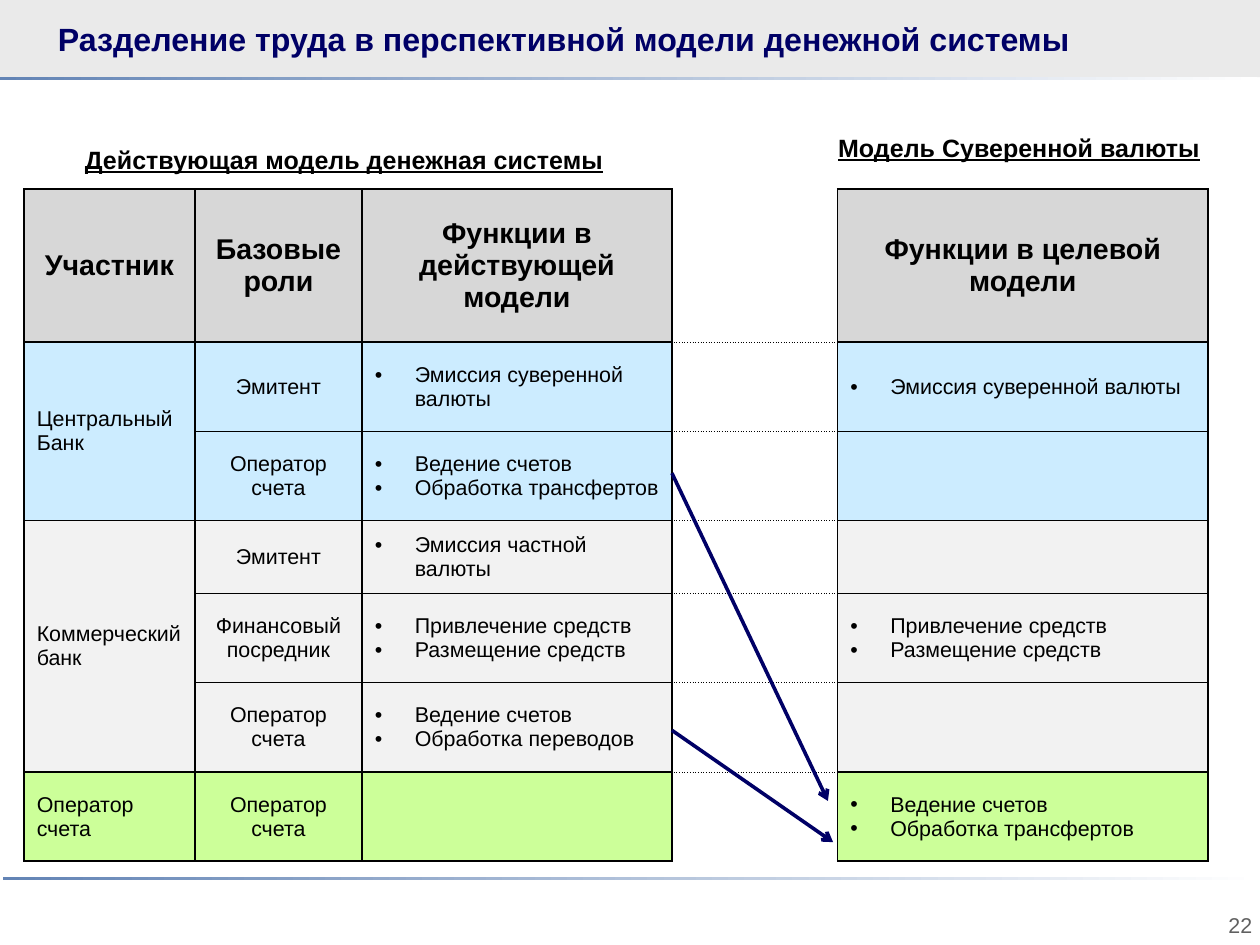
from lxml import etree
from pptx import Presentation
from pptx import util as u
from pptx.dml.color import RGBColor
from pptx.enum import shapes, text
from pptx.oxml import ns

WIDE, HIGH = u.Inches(9.8), u.Inches(7.35)
HEX = {"band": "EAEAEA", "navy": "000066", "black": "000000", "gray": "606060",
       "rule": "6384B5", "white": "FFFFFF", "head": "D7D7D7",
       "blue": "CCECFF", "pale": "F2F2F2", "green": "CCFF99"}
LEFT, TOP = 1.9, 20
COLS = [13.57, 13.27, 24.59, 13.16, 29.39]
ROWS = [16.19, 9.45, 9.45, 7.7, 9.45, 9.45, 9.45]
TINTS = ["head", "blue", "blue", "pale", "pale", "pale", "green"]
GAP = 3
SPANS = [(1, 2), (3, 5)]
CELLS = [
    ["Участник", "Базовые роли", "Функции в действующей модели", "",
     "Функции в целевой модели"],
    ["Центральный Банк", "Эмитент", "Эмиссия суверенной валюты", "",
     "Эмиссия суверенной валюты"],
    ["", "Оператор счета", "Ведение счетов\nОбработка трансфертов", "", ""],
    ["Коммерческий банк", "Эмитент", "Эмиссия частной валюты", "", ""],
    ["", "Финансовый посредник", "Привлечение средств\nРазмещение средств", "",
     "Привлечение средств\nРазмещение средств"],
    ["", "Оператор счета", "Ведение счетов\nОбработка переводов", "", ""],
    ["Оператор счета", "Оператор\nсчета", "", "",
     "Ведение счетов\nОбработка трансфертов"],
]


def rgb(name):
    """Return a palette colour."""
    return RGBColor.from_string(HEX[name])


def across(share):
    """Turn a percentage of the slide width into a length."""
    return round(WIDE * share / 100)


def down(share):
    """Turn a percentage of the slide height into a length."""
    return round(HIGH * share / 100)


def box(x, y, w, h):
    """Return left, top, width and height from slide shares."""
    return across(x), down(y), across(w), down(h)


def node(parent, tag, **attrs):
    """Add a drawing element under a parent."""
    return etree.SubElement(parent, ns.qn("a:" + tag), attrs)


def write(frame, words, size, color="black", bold=False, line=False,
          align=text.PP_ALIGN.LEFT, dots=False):
    """Fill a text frame, one paragraph per line of words."""
    for i, part in enumerate(words.split("\n")):
        para = frame.add_paragraph() if i else frame.paragraphs[0]
        para.alignment = align
        if dots:
            props = para._p.get_or_add_pPr()
            props.set("marL", str(u.Inches(0.31)))
            props.set("indent", str(-u.Inches(0.31)))
            node(props, "buFont", typeface="Arial")
            node(props, "buChar", char="•")
        run = para.add_run()
        run.text = part
        font = run.font
        font.name, font.size = "Arial", u.Pt(size)
        font.bold, font.underline = bold, line
        font.color.rgb = rgb(color)


def band(slide):
    """Add the header band."""
    shape = slide.shapes.add_shape(
        shapes.MSO_SHAPE.RECTANGLE, *box(0, 0, 100, 8.16))
    shape.shadow.inherit = False
    shape.line.fill.background()
    shape.fill.solid()
    shape.fill.fore_color.rgb = rgb("band")


def rule(slide, x, y):
    """Add a fading rule as a one-cell table."""
    table = slide.shapes.add_table(1, 1, *box(x, y, 99.8, 0.3)).table
    table.first_row = table.horz_banding = False
    cell = table.cell(0, 0)
    cell.margin_left = cell.margin_right = 0
    cell.margin_top = cell.margin_bottom = 0
    node(cell.text_frame.paragraphs[0]._p, "endParaRPr", sz="100")
    for side in "LRTB":
        edge(cell, side, 0)
    cell.fill.gradient()
    cell.fill.gradient_angle = 0
    for stop, name in zip(cell.fill.gradient_stops, ("rule", "white")):
        stop.color.rgb = rgb(name)


def title(slide, words):
    """Place the title above the header band."""
    shape = slide.shapes.title
    slide.shapes._spTree.append(shape._element)
    shape.left, shape.top, shape.width, shape.height = box(2.55, 0, 85.71, 8.16)
    frame = shape.text_frame
    frame.auto_size = text.MSO_AUTO_SIZE.NONE
    frame.vertical_anchor = text.MSO_ANCHOR.MIDDLE
    frame.margin_left, frame.margin_right = u.Inches(0.2), 0
    frame.margin_top = frame.margin_bottom = u.Inches(0.04)
    write(frame, words, 18, "navy", bold=True)


def label(slide, place, words, size, pad=True, **look):
    """Add a wrapped text box."""
    frame = slide.shapes.add_textbox(*box(*place)).text_frame
    frame.word_wrap = True
    if not pad:
        frame.margin_left = frame.margin_right = 0
        frame.margin_top = frame.margin_bottom = 0
    write(frame, words, size, **look)


def edge(cell, side, width, dash="solid"):
    """Draw one cell border, or hide it at zero width."""
    line = node(cell._tc.get_or_add_tcPr(), "ln" + side, w=str(u.Pt(width)))
    if width:
        node(node(line, "solidFill"), "srgbClr", val=HEX["black"])
        node(line, "prstDash", val=dash)
    else:
        node(line, "noFill")


def frame_cell(cell, row, col):
    """Draw the four borders of a cell."""
    for side in "LRTB":
        if col != GAP or side in "LR":
            edge(cell, side, 1)
        elif (row, side) in ((0, "T"), (len(ROWS) - 1, "B")):
            edge(cell, side, 0)
        else:
            edge(cell, side, 0.25, "sysDot")


def fill_cell(cell, row, col, words):
    """Tint a cell and set its text."""
    if (row, col) == (0, GAP):
        cell.fill.background()
    else:
        cell.fill.solid()
        cell.fill.fore_color.rgb = rgb("white" if col == GAP else TINTS[row])
    cell.vertical_anchor = text.MSO_ANCHOR.MIDDLE
    if words:
        mid = row == 0 or col == 1
        write(cell.text_frame, words, 12 if row else 16, bold=row == 0,
              align=text.PP_ALIGN.CENTER if mid else text.PP_ALIGN.LEFT,
              dots=row > 0 and col > 1)


def grid(slide):
    """Build the comparison table."""
    place = box(LEFT, TOP, sum(COLS), sum(ROWS))
    table = slide.shapes.add_table(len(ROWS), len(COLS), *place).table
    table.first_row = table.horz_banding = False
    for col, share in zip(table.columns, COLS):
        col.width = across(share)
    for row, share in zip(table.rows, ROWS):
        row.height = down(share)
    for first, last in SPANS:
        table.cell(first, 0).merge(table.cell(last, 0))
    for r, line in enumerate(CELLS):
        for c, words in enumerate(line):
            cell = table.cell(r, c)
            if not cell.is_spanned:
                frame_cell(cell, r, c)
                fill_cell(cell, r, c, words)


def arrow(slide, start, end):
    """Add an arrow between two points."""
    link = slide.shapes.add_connector(
        shapes.MSO_CONNECTOR.STRAIGHT, across(start[0]), down(start[1]),
        across(end[0]), down(end[1]))
    link.line.color.rgb = rgb("navy")
    link.line.width = u.Pt(2)
    node(link.line._get_or_add_ln(), "tailEnd", type="arrow")
    node(link._element.spPr, "effectLst")


def main():
    """Build and save the slide."""
    deck = Presentation()
    deck.slide_width, deck.slide_height = WIDE, HIGH
    slide = deck.slides.add_slide(deck.slide_layouts[5])
    band(slide)
    rule(slide, 0, 8.16)
    rule(slide, 0.2, 92.79)
    title(slide, "Разделение труда в перспективной модели денежной системы")
    grid(slide)
    side = LEFT + sum(COLS[:GAP])
    arrow(slide, (side, 77.28), (66.12, 89.12))
    arrow(slide, (side, 50.07), (65.71, 84.76))
    label(slide, (1.8, 14.6, 51.02, 4.63), "Действующая модель денежная системы",
          14, bold=True, line=True, align=text.PP_ALIGN.CENTER)
    label(slide, (65.31, 13.33, 30.92, 4.63), "Модель Суверенной валюты",
          14, bold=True, line=True, align=text.PP_ALIGN.RIGHT)
    label(slide, (86.02, 96.5, 13.37, 2.72), "22", 12, pad=False,
          color="gray", align=text.PP_ALIGN.RIGHT)
    deck.save("out.pptx")


if __name__ == "__main__":
    main()
